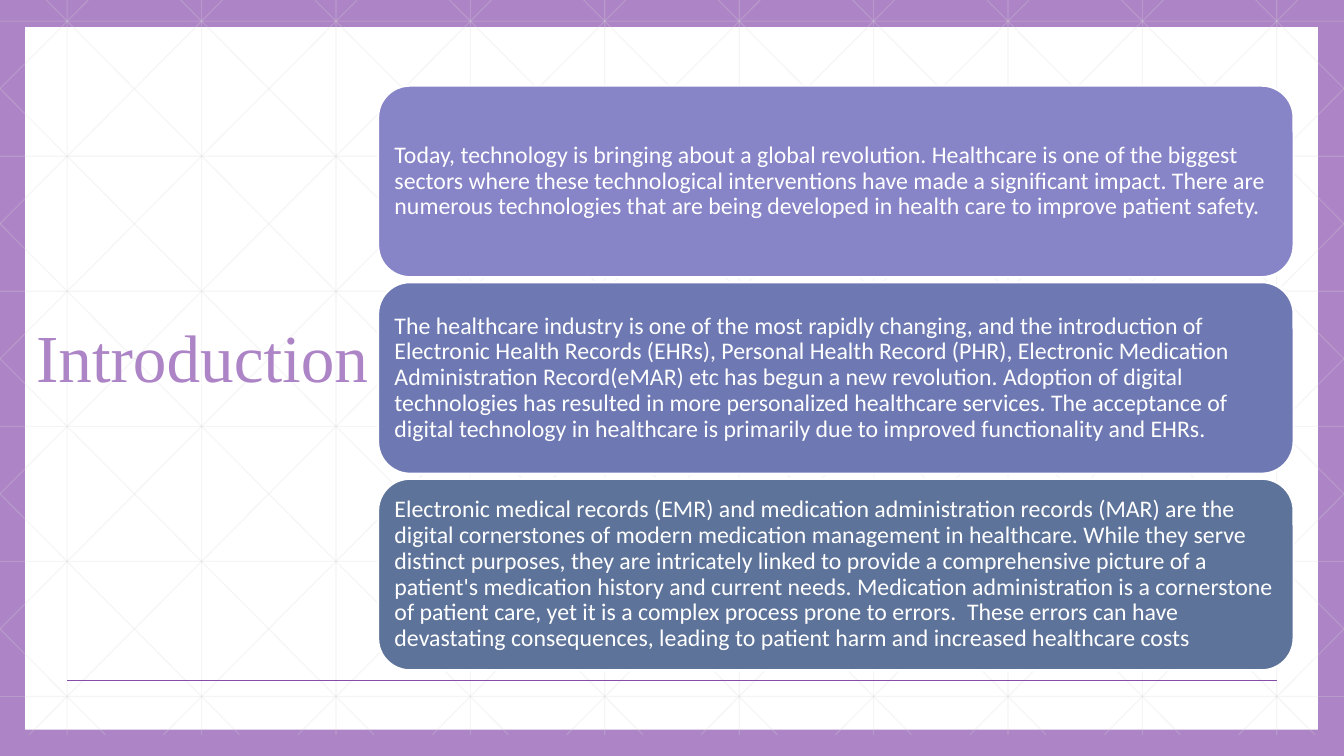
import pptx
import pptx.util
import pptx.dml.color
import pptx.enum.shapes
import pptx.enum.text
import pptx.oxml.ns
from lxml import etree

W, H = 13.33, 7.5
COL, ROW = W / 10, 1.34
GRID_LEFT, GRID_TOP, GRID_BOTTOM = COL / 2, 0.21, 7.29
CARD_LEFT, CARD_TOP, CARD_W, CARD_H, CARD_STEP = 3.75, 0.85, 9.08, 1.9, 1.95

CARDS = [
    ("8784C7", "Today, technology is bringing about a global revolution. Healthcare is one of "
     "the biggest sectors where these technological interventions have made a significant "
     "impact. There are numerous technologies that are being developed in health care to "
     "improve patient safety."),
    ("6E79B3", "The healthcare industry is one of the most rapidly changing, and the "
     "introduction of Electronic Health Records (EHRs), Personal Health Record (PHR), "
     "Electronic Medication Administration Record(eMAR) etc has begun a new revolution. "
     "Adoption of digital technologies has resulted in more personalized healthcare services. "
     "The acceptance of digital technology in healthcare is primarily due to improved "
     "functionality and EHRs."),
    ("5D739A", "Electronic medical records (EMR) and medication administration records (MAR) "
     "are the digital cornerstones of modern medication management in healthcare. While they "
     "serve distinct purposes, they are intricately linked to provide a comprehensive picture "
     "of a patient's medication history and current needs. Medication administration is a "
     "cornerstone of patient care, yet it is a complex process prone to errors.  These errors "
     "can have devastating consequences, leading to patient harm and increased healthcare "
     "costs"),
]


def inches(*values):
    return [pptx.util.Inches(v) for v in values]


def rgb(color):
    return pptx.dml.color.RGBColor.from_string(color)


def add_line(s, start, end, color, width, alpha=None):
    line = s.shapes.add_connector(pptx.enum.shapes.MSO_CONNECTOR.STRAIGHT,
                                  *inches(*start, *end))
    line.line.color.rgb = rgb(color)
    line.line.width = pptx.util.Pt(width)
    qn = pptx.oxml.ns.qn
    sp_pr = line.element.spPr
    if alpha is not None:
        clr = sp_pr.find(".//" + qn("a:srgbClr"))
        etree.SubElement(clr, qn("a:alpha"), val=str(alpha * 1000))
    etree.SubElement(sp_pr, qn("a:effectLst"))


def add_box(s, kind, box, fill, outline=None):
    sp = s.shapes.add_shape(kind, *inches(*box))
    sp.shadow.inherit = False
    sp.fill.solid()
    sp.fill.fore_color.rgb = rgb(fill)
    if outline:
        sp.line.color.rgb = rgb(outline)
        sp.line.width = pptx.util.Pt(1.5)
    else:
        sp.line.fill.background()
    return sp


def write(sp, text, font, size, color, space_after=0):
    tf = sp.text_frame
    tf.word_wrap = True
    tf.vertical_anchor = pptx.enum.text.MSO_ANCHOR.MIDDLE
    p = tf.paragraphs[0]
    p.alignment = pptx.enum.text.PP_ALIGN.LEFT
    p.line_spacing = 0.9
    p.space_after = pptx.util.Pt(space_after)
    r = p.add_run()
    r.text = text
    r.font.name = font
    r.font.size = pptx.util.Pt(size)
    r.font.color.rgb = rgb(color)


def grid_lines():
    """Yield the ends of the grid lines and of both sets of diagonals through its nodes."""
    for i in range(10):
        x = GRID_LEFT + i * COL
        yield (x, 0), (x, GRID_BOTTOM)
    for j in range(6):
        y = GRID_TOP + j * ROW
        yield (0, y), (W, y)
    slope = ROW / COL
    for k in range(-5, 10):
        x_top = GRID_LEFT + k * COL - GRID_TOP / slope
        x1 = max(0, x_top)
        x2 = min(W, x_top + GRID_BOTTOM / slope)
        y1, y2 = (x1 - x_top) * slope, (x2 - x_top) * slope
        yield (x1, y1), (x2, y2)
        yield (W - x1, y1), (W - x2, y2)


def add_backdrop(s):
    s.background.fill.solid()
    s.background.fill.fore_color.rgb = rgb("AD84C6")
    add_box(s, pptx.enum.shapes.MSO_SHAPE.RECTANGLE, (0.25, 0.27, 12.82, 6.97), "FFFFFF")
    for start, end in grid_lines():
        add_line(s, start, end, "D9D9D9", 0.79, alpha=25)
    add_line(s, (GRID_LEFT, 0.9 * H), (W - GRID_LEFT, 0.9 * H), "874EA9", 1)


def add_card(s, index, fill, text):
    box = (CARD_LEFT, CARD_TOP + index * CARD_STEP, CARD_W, CARD_H)
    sp = add_box(s, pptx.enum.shapes.MSO_SHAPE.ROUNDED_RECTANGLE, box, fill, "FFFFFF")
    tf = sp.text_frame
    tf.margin_left = tf.margin_right = tf.margin_top = tf.margin_bottom = pptx.util.Inches(0.07)
    write(sp, text, "Calibri", 17, "FFFFFF", space_after=6)


def main():
    prs = pptx.Presentation()
    prs.slide_width, prs.slide_height = inches(W, H)
    s = prs.slides.add_slide(prs.slide_layouts[6])
    add_backdrop(s)
    title = s.shapes.add_textbox(*inches(0.26, 0.51, 3.68, 6.13))
    write(title, "Introduction", "Times New Roman", 48, "AD84C6")
    for i, (fill, text) in enumerate(CARDS):
        add_card(s, i, fill, text)
    prs.save("out.pptx")


if __name__ == "__main__":
    main()
